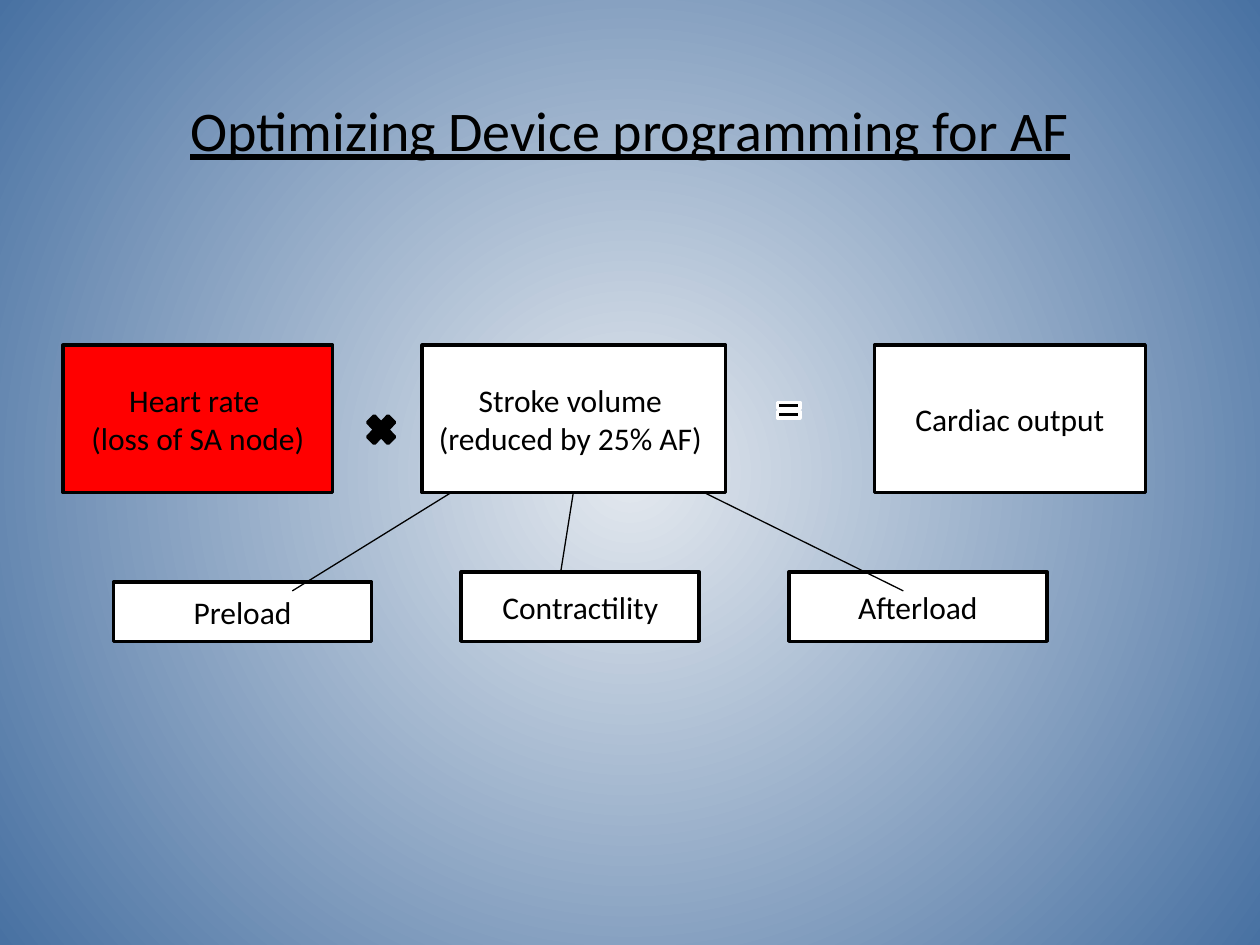
from dataclasses import dataclass

from lxml.etree import SubElement
from pptx import Presentation
from pptx.dml.color import RGBColor
from pptx.enum.shapes import MSO_CONNECTOR, MSO_SHAPE
from pptx.enum.text import MSO_ANCHOR, PP_ALIGN
from pptx.oxml.ns import qn
from pptx.slide import Slide
from pptx.text.text import TextFrame
from pptx.util import Inches, Pt


@dataclass(frozen=True)
class Theme:
    font: str = "Calibri"
    head: int = 32
    body: int = 18
    edge: float = 2
    thin: float = 0.75
    black: RGBColor = RGBColor(0, 0, 0)
    white: RGBColor = RGBColor(255, 255, 255)
    red: RGBColor = RGBColor(255, 0, 0)
    glow: RGBColor = RGBColor(0xE4, 0xE9, 0xEF)
    rim: RGBColor = RGBColor(0x48, 0x71, 0xA2)


THEME = Theme()


@dataclass(frozen=True)
class Item:
    left: float
    top: float
    width: float
    height: float
    text: str = ""
    fill: RGBColor = THEME.white
    line: RGBColor = THEME.black
    kind: MSO_SHAPE = MSO_SHAPE.RECTANGLE


@dataclass(frozen=True)
class Link:
    start: float
    end: float
    drop: float


# Main row, factor row and operator signs
ROW, TALL = 2.74, 1.17
BASE = ROW + TALL
ITEMS = [
    Item(0.5, ROW, 2.14, TALL, "Heart rate \n(loss of SA node)", THEME.red),
    Item(3.35, ROW, 2.41, TALL, "Stroke volume \n(reduced by 25% AF) "),
    Item(6.94, ROW, 2.15, TALL, "Cardiac output"),
    Item(0.9, 4.62, 2.05, 0.47, "Preload"),
    Item(3.66, 4.54, 1.89, 0.55, "Contractility"),
    Item(6.26, 4.54, 2.05, 0.55, "Afterload"),
]
LINKS = [Link(4.55, 4.45, 4.54), Link(3.58, 2.32, 4.69), Link(5.59, 7.17, 4.69)]
SIGNS = [
    Item(6.14, 3.15, 0.24, 0.21, fill=THEME.black, line=THEME.white,
         kind=MSO_SHAPE.MATH_EQUAL),
    Item(2.87, 3.25, 0.31, 0.32, fill=THEME.black, kind=MSO_SHAPE.MATH_MULTIPLY),
]


def paint(slide: Slide) -> None:
    """Fill the background with a glow from the centre."""
    fill = slide.background.fill
    fill.gradient()
    for stop, color in zip(fill.gradient_stops, (THEME.glow, THEME.rim)):
        stop.color.rgb = color
    grad = slide.element.find(".//" + qn("a:gradFill"))
    grad.remove(grad.find(qn("a:lin")))
    ring = SubElement(grad, qn("a:path"), path="circle")
    SubElement(ring, qn("a:fillToRect"), dict.fromkeys("ltrb", "50000"))


def write(frame: TextFrame, text: str, size: int, under: bool = False) -> None:
    frame.word_wrap = True
    frame.text = text
    for para in frame.paragraphs:
        para.alignment = PP_ALIGN.CENTER
        font = para.font
        font.name, font.size = THEME.font, Pt(size)
        font.color.rgb = THEME.black
        if under:
            font.underline = True


def draw(slide: Slide, item: Item) -> None:
    shape = slide.shapes.add_shape(
        item.kind, Inches(item.left), Inches(item.top),
        Inches(item.width), Inches(item.height))
    shape.shadow.inherit = False
    shape.fill.solid()
    shape.fill.fore_color.rgb = item.fill
    shape.line.color.rgb = item.line
    shape.line.width = Pt(THEME.edge)
    if item.text:
        shape.text_frame.vertical_anchor = MSO_ANCHOR.MIDDLE
        write(shape.text_frame, item.text, THEME.body)


def join(slide: Slide, link: Link) -> None:
    line = slide.shapes.add_connector(
        MSO_CONNECTOR.STRAIGHT, Inches(link.start), Inches(BASE),
        Inches(link.end), Inches(link.drop))
    line.line.color.rgb = THEME.black
    line.line.width = Pt(THEME.thin)
    SubElement(line._element.spPr, qn("a:effectLst"))


def main() -> None:
    deck = Presentation()
    deck.slide_width, deck.slide_height = Inches(10), Inches(7.5)
    slide = deck.slides.add_slide(deck.slide_layouts[6])
    paint(slide)

    # Title
    title = slide.shapes.add_textbox(
        Inches(0.5), Inches(0.71), Inches(9), Inches(1.04))
    write(title.text_frame, "Optimizing Device programming for AF",
          THEME.head, under=True)

    # Diagram
    for item in ITEMS:
        draw(slide, item)
    for link in LINKS:
        join(slide, link)
    for sign in SIGNS:
        draw(slide, sign)

    deck.save("out.pptx")


if __name__ == "__main__":
    main()
